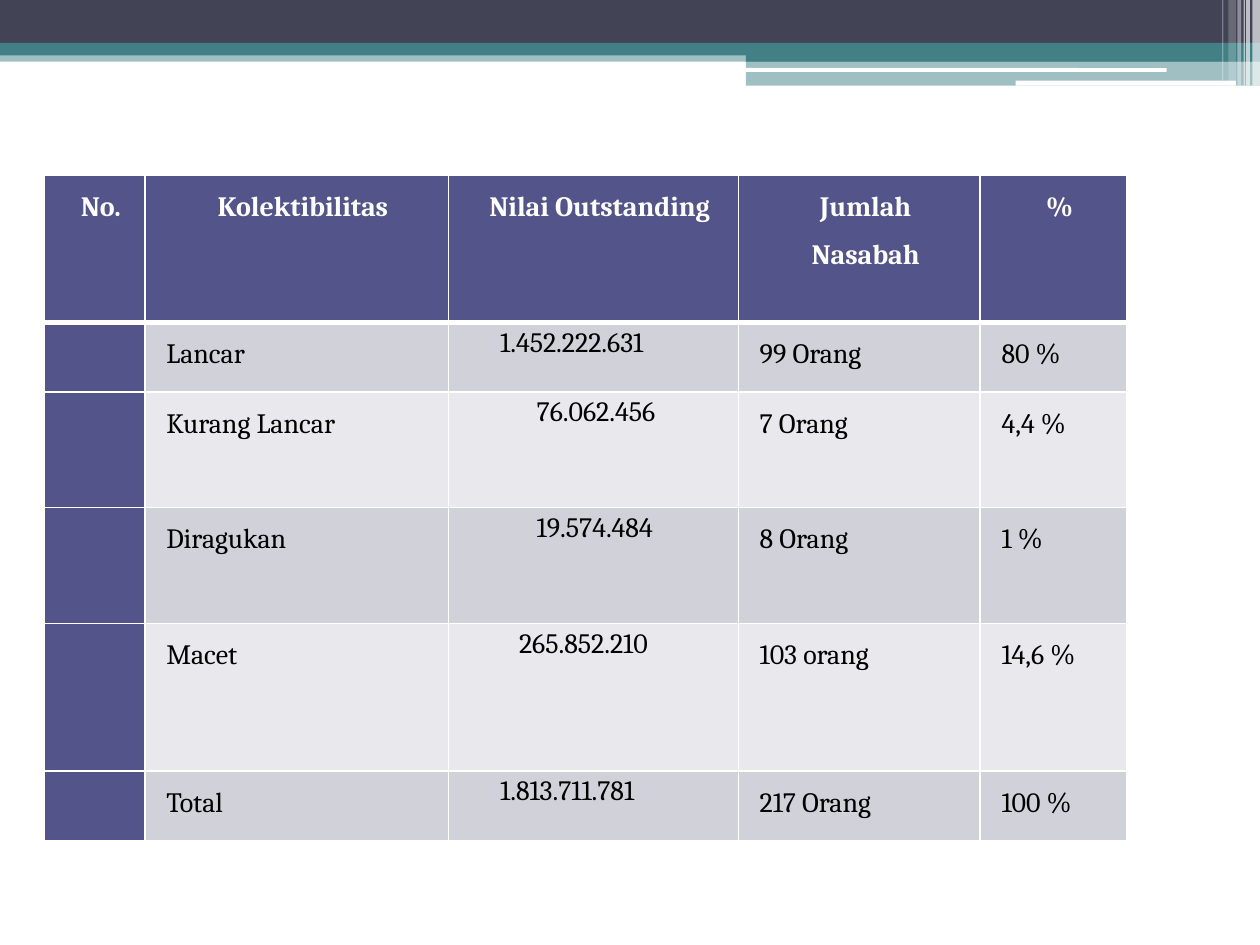
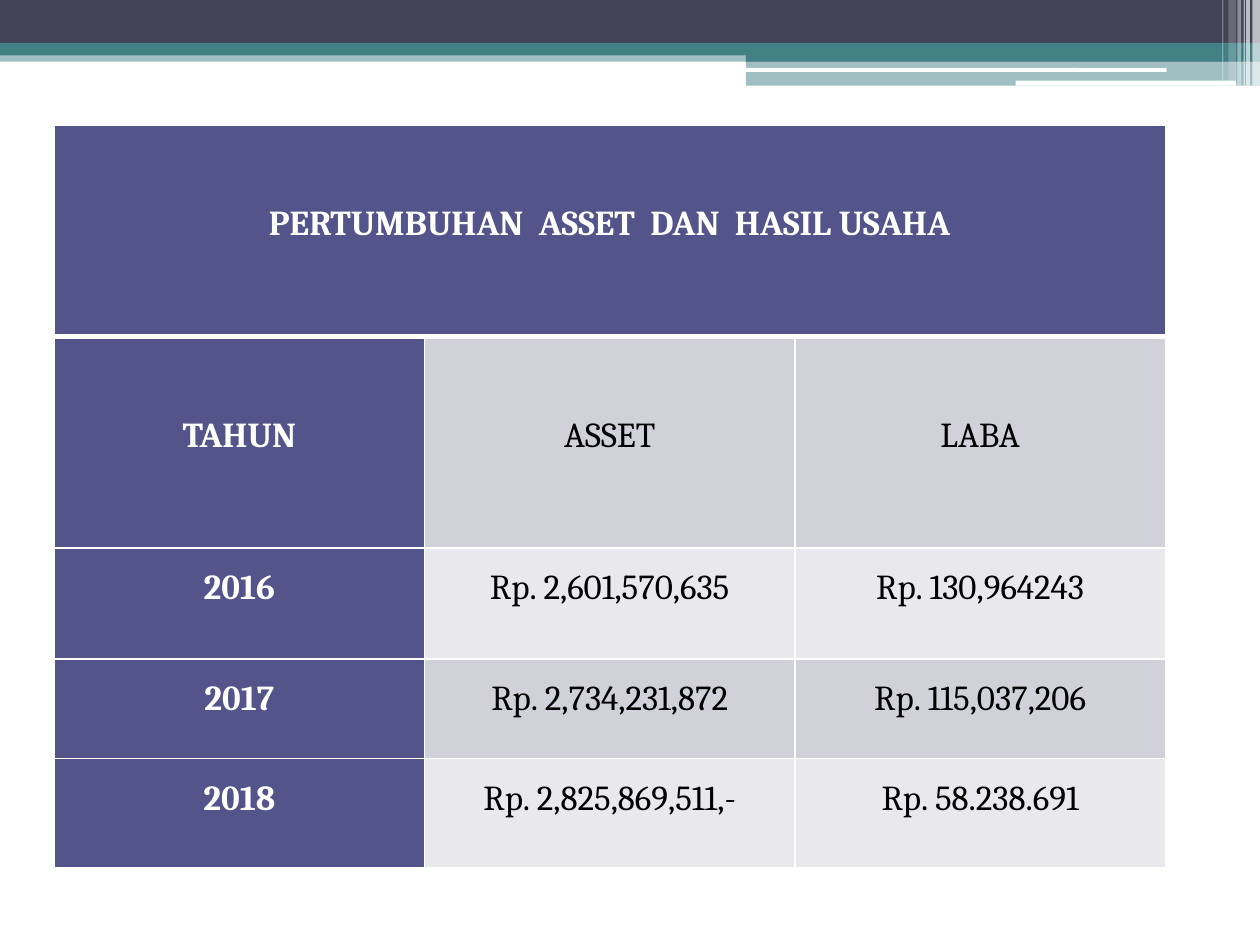
from lxml import etree
from pptx import Presentation
from pptx.dml.color import RGBColor
from pptx.enum.shapes import MSO_SHAPE
from pptx.enum.text import PP_ALIGN
from pptx.oxml.ns import qn
from pptx.util import Inches, Pt

RECT, ROUNDED = MSO_SHAPE.RECTANGLE, MSO_SHAPE.ROUNDED_RECTANGLE
CENTER, JUSTIFY = PP_ALIGN.CENTER, PP_ALIGN.JUSTIFY
WHITE = RGBColor(0xFF, 0xFF, 0xFF)
BLACK = RGBColor(0, 0, 0)
SLATE = RGBColor(0x42, 0x44, 0x56)
TEAL = RGBColor(0x43, 0x80, 0x86)
INDIGO = RGBColor(0x53, 0x54, 0x8A)
ROW_DARK = RGBColor(0xD1, 0xD1, 0xDA)
ROW_LIGHT = RGBColor(0xE9, 0xE9, 0xED)
FONT = "Cambria"

BANDS = [
    (RECT, 0, 0.4, 10, 0.09, TEAL, 50),
    (RECT, 0, 0, 10, 0.34, SLATE, 100),
    (RECT, 0, 0.34, 10, 0.1, TEAL, 100),
    (RECT, 5.92, 0.39, 4.08, 0.1, TEAL, 100),
    (RECT, 5.92, 0.48, 4.08, 0.2, TEAL, 50),
    (ROUNDED, 5.91, 0.54, 3.35, 0.03, WHITE, 100),
    (ROUNDED, 8.06, 0.64, 1.75, 0.04, WHITE, 100),
    (RECT, 9.94, 0, 0.06, 0.68, WHITE, 65),
    (RECT, 9.89, 0, 0.03, 0.68, WHITE, 65),
    (RECT, 9.87, 0, 0.01, 0.68, WHITE, 60),
    (RECT, 9.82, 0, 0.03, 0.68, WHITE, 40),
    (RECT, 9.75, 0, 0.06, 0.64, WHITE, 20),
    (RECT, 9.7, 0, 0.01, 0.64, WHITE, 30),
]

COLLECTIBILITY = [
    ["No.", "Kolektibilitas", "Nilai Outstanding", "Jumlah\nNasabah", "%"],
    ["", "Lancar", "1.452.222.631", "99 Orang", "80 %"],
    ["", "Kurang Lancar", "76.062.456", "7 Orang", "4,4 %"],
    ["", "Diragukan", "19.574.484", "8 Orang", "1 %"],
    ["", "Macet", "265.852.210", "103 orang", "14,6 %"],
    ["", "Total", "1.813.711.781", "217 Orang", "100 %"],
]
OUTSTANDING_INDENTS = [0.1, 0.34, 0.63, 0.63, 0.49, 0.34]

GROWTH = [
    ["PERTUMBUHAN  ASSET  DAN  HASIL USAHA", "", ""],
    ["TAHUN", "ASSET", "LABA"],
    ["2016", "Rp. 2,601,570,635", "Rp. 130,964243"],
    ["2017", "Rp. 2,734,231,872", "Rp. 115,037,206"],
    ["2018", "Rp. 2,825,869,511,-", "Rp. 58.238.691"],
]


def write_text(cell, text, size=16, color=BLACK, bold=False, align=JUSTIFY,
               indent=0, spacing=1.5, after=0, top=0):
    cell.margin_left = cell.margin_right = Inches(0.07)
    cell.margin_top, cell.margin_bottom = Inches(top), 0
    cell.text_frame.text = text
    for paragraph in cell.text_frame.paragraphs:
        paragraph.alignment = align
        paragraph.line_spacing = spacing
        paragraph.space_after = Pt(after)
        paragraph._p.get_or_add_pPr().set("marL", str(Inches(indent)))
        paragraph.font.size = Pt(size)
        for run in paragraph.runs:
            run.font.name = FONT
            run.font.size = Pt(size)
            run.font.bold = bold
            run.font.color.rgb = color


def add_grid(slide, rows, left, top, widths, heights):
    grid = slide.shapes.add_table(
        len(rows), len(widths), Inches(left), Inches(top),
        Inches(sum(widths)), Inches(sum(heights))).table
    grid.horz_banding = False
    for column, width in zip(grid.columns, widths):
        column.width = Inches(width)
    for r, height in enumerate(heights):
        grid.rows[r].height = Inches(height)
        for c in range(len(widths)):
            cell = grid.cell(r, c)
            properties = cell._tc.get_or_add_tcPr()
            for side in ("lnL", "lnR", "lnT", "lnB"):
                heavy = (r, side) in [(0, "lnB"), (1, "lnT")]
                border = etree.SubElement(properties, qn("a:" + side), w=str(Pt(3 if heavy else 1)))
                paint = etree.SubElement(border, qn("a:solidFill"))
                etree.SubElement(paint, qn("a:srgbClr"), val=str(WHITE))
            cell.fill.solid()
            stripe = ROW_DARK if r % 2 else ROW_LIGHT
            cell.fill.fore_color.rgb = INDIGO if r == 0 or c == 0 else stripe
    return grid


prs = Presentation()
prs.slide_width, prs.slide_height = Inches(10), Inches(7.5)
blank = prs.slide_layouts[6]
collectibility_slide = prs.slides.add_slide(blank)
growth_slide = prs.slides.add_slide(blank)

for slide in prs.slides:
    for kind, left, top, width, height, color, opacity in BANDS:
        band = slide.shapes.add_shape(
            kind, Inches(left), Inches(top), Inches(width), Inches(height))
        band.shadow.inherit = False
        band.line.fill.background()
        band.fill.solid()
        band.fill.fore_color.rgb = color
        if opacity < 100:
            tint = band._element.spPr.find(qn("a:solidFill")).find(qn("a:srgbClr"))
            etree.SubElement(tint, qn("a:alpha"), val=str(opacity * 1000))

loans = add_grid(collectibility_slide, COLLECTIBILITY, 0.35, 1.39,
                 [0.8, 2.41, 2.3, 1.92, 1.16], [1.17, 0.55, 0.92, 0.92, 1.17, 0.55])
for r, row in enumerate(COLLECTIBILITY):
    for c, text in enumerate(row):
        if r == 0:
            write_text(loans.cell(r, c), text, color=WHITE, bold=True, align=CENTER, indent=0.1)
        elif c == 2:
            write_text(loans.cell(r, c), text, indent=OUTSTANDING_INDENTS[r],
                       spacing=1.15, after=10)
        else:
            write_text(loans.cell(r, c), text, indent=0.1)

growth = add_grid(growth_slide, GROWTH, 0.43, 0.99, [2.94] * 3, [1.68, 1.68, 0.88, 0.79, 0.87])
growth.cell(0, 0).merge(growth.cell(0, 2))
for r, row in enumerate(GROWTH):
    for c, text in enumerate(row):
        heading = r == 0 or c == 0
        write_text(growth.cell(r, c), text, size=20, color=WHITE if heading else BLACK,
                   bold=heading, align=CENTER, top=0.47 if r < 2 else 0)

prs.save("out.pptx")
